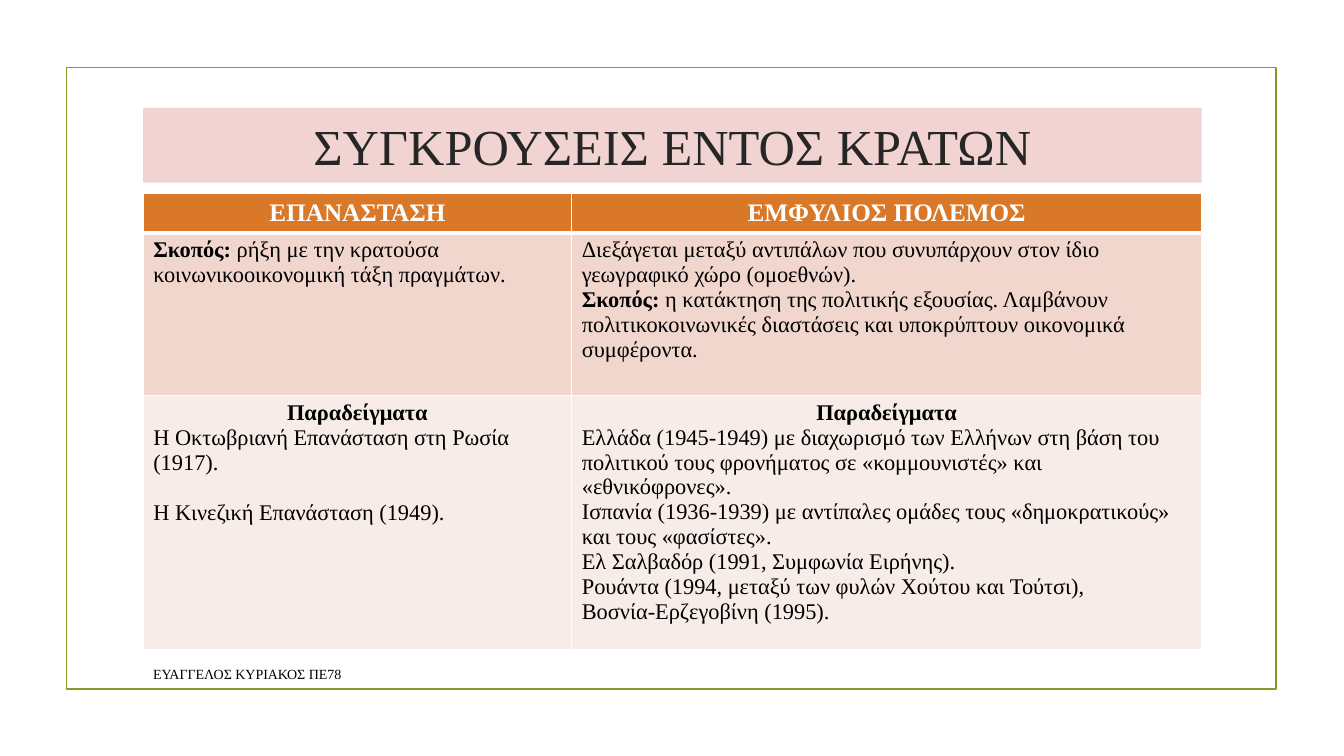
from dataclasses import dataclass

from lxml.etree import SubElement
from pptx import Presentation
from pptx.dml.color import RGBColor
from pptx.enum.shapes import MSO_SHAPE
from pptx.enum.text import MSO_ANCHOR, PP_ALIGN
from pptx.oxml.ns import qn
from pptx.util import Cm, Pt


@dataclass(frozen=True)
class Theme:
    font: str = "Times New Roman"
    frame: str = "83992A"
    title_fill: str = "F1D4D2"
    title_text: str = "262626"
    header_fill: str = "D97828"
    purpose_fill: str = "F1D6CD"
    examples_fill: str = "F8ECE8"
    white: str = "FFFFFF"
    black: str = "000000"
    title_size: int = 36
    header_size: int = 18
    body_size: int = 16
    author_size: int = 10


THEME = Theme()
LEFT, WIDTH = Cm(3.61), Cm(26.67)
COLUMN_WIDTHS = (Cm(10.8), Cm(15.87))
ROW_HEIGHTS = (Cm(0.99), Cm(4.09), Cm(6.4))
ROW_FILLS = (THEME.header_fill, THEME.purpose_fill, THEME.examples_fill)

# Each cell is a list of paragraphs; a paragraph is (text, bold) runs
EXAMPLES = [("Παραδείγματα", True)]
COMPARISON = (
    (
        [[("ΕΠΑΝΑΣΤΑΣΗ", True)]],
        [[("ΕΜΦΥΛΙΟΣ ΠΟΛΕΜΟΣ", True)]],
    ),
    (
        [[("Σκοπός:", True),
          (" ρήξη με την κρατούσα κοινωνικοοικονομική τάξη πραγμάτων.", False)]],
        [[("Διεξάγεται μεταξύ αντιπάλων που συνυπάρχουν στον ίδιο "
           "γεωγραφικό χώρο (ομοεθνών).", False)],
         [("Σκοπός:", True),
          (" η κατάκτηση της πολιτικής εξουσίας. Λαμβάνουν πολιτικοκοινωνικές "
           "διαστάσεις και υποκρύπτουν οικονομικά συμφέροντα.", False)]],
    ),
    (
        [EXAMPLES,
         [("Η Οκτωβριανή Επανάσταση στη Ρωσία (1917).", False)],
         [("Η Κινεζική Επανάσταση (1949).", False)]],
        [EXAMPLES,
         [("Ελλάδα (1945-1949) με διαχωρισμό των Ελλήνων στη βάση του πολιτικού "
           "τους φρονήματος σε «κομμουνιστές» και «εθνικόφρονες».", False)],
         [("Ισπανία (1936-1939) με αντίπαλες ομάδες τους «δημοκρατικούς» "
           "και τους «φασίστες».", False)],
         [("Ελ Σαλβαδόρ (1991, Συμφωνία Ειρήνης).", False)],
         [("Ρουάντα (1994, μεταξύ των φυλών Χούτου και Τούτσι),", False)],
         [("Βοσνία-Ερζεγοβίνη (1995).", False)]],
    ),
)


def apply_format(target, values):
    for attribute, value in values.items():
        setattr(target, attribute, value)


def paint(fill, color):
    fill.solid()
    fill.fore_color.rgb = RGBColor.from_string(color)


def write_run(paragraph, text, size, color, bold=False):
    run = paragraph.add_run()
    run.text = text
    apply_format(run.font, {"name": THEME.font, "size": Pt(size), "bold": bold})
    run.font.color.rgb = RGBColor.from_string(color)


def add_frame(slide):
    frame = slide.shapes.add_shape(
        MSO_SHAPE.RECTANGLE, Cm(1.68), Cm(1.7), Cm(30.48), Cm(15.67))
    frame.shadow.inherit = False
    frame.fill.background()
    frame.line.color.rgb = RGBColor.from_string(THEME.frame)
    frame.line.width = Pt(1.25)


def add_title(slide, text):
    title = slide.shapes.title
    apply_format(title, {"left": LEFT, "top": Cm(2.72),
                         "width": WIDTH, "height": Cm(1.88)})
    paint(title.fill, THEME.title_fill)
    title.text_frame.vertical_anchor = MSO_ANCHOR.MIDDLE
    heading = title.text_frame.paragraphs[0]
    heading.alignment = PP_ALIGN.CENTER
    write_run(heading, text, THEME.title_size, THEME.title_text)


def add_borders(cell, widths):
    properties = cell._tc.get_or_add_tcPr()
    for side, width in widths.items():
        border = SubElement(properties, qn(f"a:ln{side}"), w=str(Pt(width)))
        solid = SubElement(border, qn("a:solidFill"))
        SubElement(solid, qn("a:srgbClr"), val=THEME.white)


def fill_cell(cell, paragraphs, is_header):
    size = THEME.header_size if is_header else THEME.body_size
    color = THEME.white if is_header else THEME.black
    for index, runs in enumerate(paragraphs):
        frame = cell.text_frame
        paragraph = frame.add_paragraph() if index else frame.paragraphs[0]
        centred = is_header or runs is EXAMPLES
        paragraph.alignment = PP_ALIGN.CENTER if centred else PP_ALIGN.LEFT
        for text, bold in runs:
            write_run(paragraph, text, size, color, bold)


def add_comparison(slide):
    table = slide.shapes.add_table(
        len(ROW_HEIGHTS), len(COLUMN_WIDTHS),
        LEFT, Cm(4.88), WIDTH, sum(ROW_HEIGHTS)).table
    for column, width in zip(table.columns, COLUMN_WIDTHS):
        column.width = width
    for row, height in enumerate(ROW_HEIGHTS):
        table.rows[row].height = height
        # The rule under the header is thicker than the others
        widths = {"L": 1, "R": 1, "T": 3 if row == 1 else 1,
                  "B": 3 if row == 0 else 1}
        for column, paragraphs in enumerate(COMPARISON[row]):
            cell = table.cell(row, column)
            add_borders(cell, widths)
            paint(cell.fill, ROW_FILLS[row])
            fill_cell(cell, paragraphs, row == 0)
    # One line of space sets the two revolutions apart
    table.cell(2, 0).text_frame.paragraphs[2].space_before = Pt(18)


def add_author(slide, text):
    author = slide.shapes.add_textbox(LEFT, Cm(16.59), Cm(20.29), Cm(0.79))
    apply_format(author.text_frame, {"word_wrap": True,
                                     "vertical_anchor": MSO_ANCHOR.MIDDLE})
    write_run(author.text_frame.paragraphs[0], text,
              THEME.author_size, THEME.black)


def main():
    presentation = Presentation()
    apply_format(presentation, {"slide_width": Cm(33.87),
                                "slide_height": Cm(19.05)})
    slide = presentation.slides.add_slide(presentation.slide_layouts[5])
    add_frame(slide)
    add_title(slide, "ΣΥΓΚΡΟΥΣΕΙΣ ΕΝΤΟΣ ΚΡΑΤΩΝ")
    add_comparison(slide)
    add_author(slide, "ΕΥΑΓΓΕΛΟΣ ΚΥΡΙΑΚΟΣ ΠΕ78")
    presentation.save("out.pptx")


if __name__ == "__main__":
    main()
